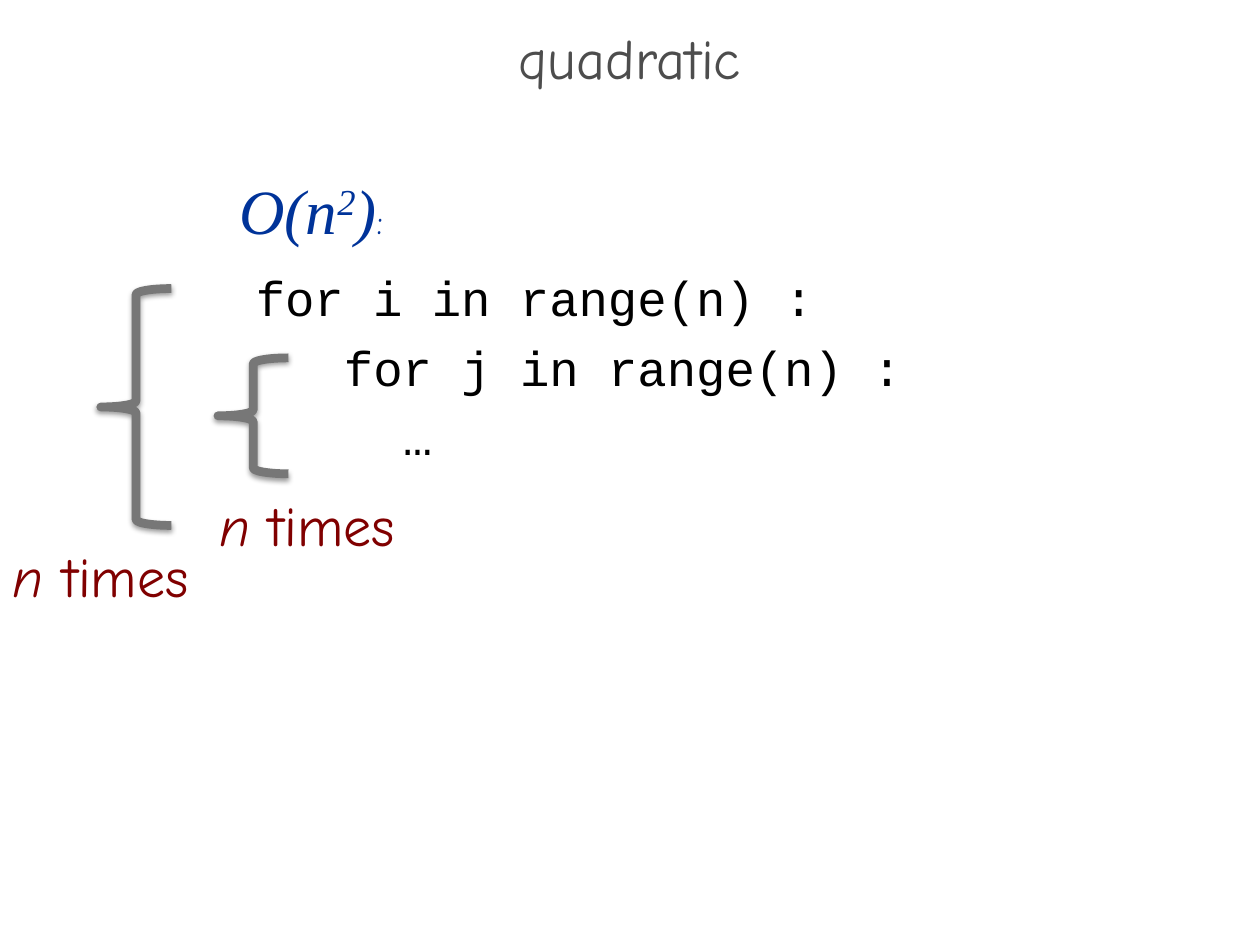
import dataclasses

import lxml.etree
import pptx
import pptx.dml.color
import pptx.enum.shapes
import pptx.enum.text
import pptx.oxml
import pptx.oxml.ns
import pptx.util


@dataclasses.dataclass(frozen=True)
class Theme:
    """Colours, fonts and type sizes of the slide."""

    hand: str = "Comic Neue"
    math: str = "Times New Roman"
    code: str = "Courier New"
    title: str = "4D4D4D"
    formula: str = "003399"
    ink: str = "000000"
    label: str = "800000"
    brace: str = "777777"
    paper: str = "FFFFFF"
    heading_size: int = 32
    formula_size: int = 36
    colon_size: int = 20
    code_size: int = 28
    brace_width: int = 5


@dataclasses.dataclass(frozen=True)
class Box:
    """A region in columns and rows of the slide grid."""

    column: float
    row: float
    columns: float
    rows: float

    def lengths(self):
        """Return left, top, width and height as lengths."""
        return [pptx.util.Inches(value * CELL) for value in dataclasses.astuple(self)]


CELL = 0.1
THEME = Theme()
SHADOW = (
    '<a:effectLst xmlns:a="http://schemas.openxmlformats.org/drawingml/2006/main">'
    '<a:outerShdw blurRad="39370" dist="20320" dir="5400000" rotWithShape="0">'
    '<a:srgbClr val="000000"><a:alpha val="38000"/></a:srgbClr>'
    "</a:outerShdw></a:effectLst>"
)


def rgb(code):
    """Return a colour from its hexadecimal code."""
    return pptx.dml.color.RGBColor.from_string(code)


def add_span(para, text, font, size, colour, italic=False):
    """Add one formatted run to a paragraph."""
    span = para.add_run()
    span.text = text
    span.font.name = font
    span.font.size = pptx.util.Pt(size)
    span.font.italic = italic
    span.font.color.rgb = rgb(colour)
    return span


def place(shape, box):
    """Move a shape into a box."""
    shape.left, shape.top, shape.width, shape.height = box.lengths()


def indent(para, margin):
    """Start a paragraph without a bullet at a margin in inches."""
    properties = para._p.get_or_add_pPr()
    properties.set("marL", str(int(pptx.util.Inches(margin))))
    properties.set("indent", "0")
    lxml.etree.SubElement(properties, pptx.oxml.ns.qn("a:buNone"))


def add_title(page, box):
    """Fill the title placeholder."""
    title = page.shapes.title
    place(title, box)
    frame = title.text_frame
    frame.auto_size = pptx.enum.text.MSO_AUTO_SIZE.NONE
    frame.vertical_anchor = pptx.enum.text.MSO_ANCHOR.MIDDLE
    para = frame.paragraphs[0]
    para.alignment = pptx.enum.text.PP_ALIGN.CENTER
    para.line_spacing = 0.7
    add_span(para, "quadratic", THEME.hand, THEME.heading_size, THEME.title)


def add_code(page, box):
    """Fill the body placeholder with the formula and the nested loops."""
    body = page.placeholders[1]
    place(body, box)
    frame = body.text_frame
    frame.auto_size = pptx.enum.text.MSO_AUTO_SIZE.NONE
    para = frame.paragraphs[0]
    para.space_before = pptx.util.Pt(4.6)
    para.space_after = pptx.util.Pt(12)
    indent(para, 0)
    for text, raised in (("O(n", False), ("2", True), (")", False)):
        span = add_span(para, text, THEME.math, THEME.formula_size, THEME.formula, True)
        if raised:
            span.font._element.set("baseline", "30000")
    add_span(para, ":", THEME.hand, THEME.colon_size, THEME.formula)

    character = 0.6 * THEME.code_size / 72
    lines = ((0, "for i in range(n) :"), (3, "for j in range(n) :"), (5, "…"))
    for depth, text in lines:
        para = frame.add_paragraph()
        para.level = 1
        para.space_before = pptx.util.Pt(0)
        para.space_after = pptx.util.Pt(6)
        indent(para, 0.13 + depth * character)
        add_span(para, text, THEME.code, THEME.code_size, THEME.ink)


def add_loop_marker(page, box, label_shift):
    """Draw a brace in a box and its repeat count below it."""
    label_box = Box(box.column + label_shift, box.row + box.rows + 0.8, 17.5, 6.4)
    label = page.shapes.add_textbox(*label_box.lengths())
    label.fill.solid()
    label.fill.fore_color.rgb = rgb(THEME.paper)
    label.text_frame.word_wrap = False
    para = label.text_frame.paragraphs[0]
    for text, italic in (("n", True), (" times", False)):
        add_span(para, text, THEME.hand, THEME.heading_size, THEME.label, italic)

    brace = page.shapes.add_shape(
        pptx.enum.shapes.MSO_SHAPE.LEFT_BRACE, *box.lengths()
    )
    brace.fill.background()
    brace.line.color.rgb = rgb(THEME.brace)
    brace.line.width = pptx.util.Pt(THEME.brace_width)
    brace._element.spPr.append(pptx.oxml.parse_xml(SHADOW))


def main():
    """Build and save the slide."""
    deck = pptx.Presentation()
    deck.slide_width = pptx.util.Inches(100 * CELL)
    deck.slide_height = pptx.util.Inches(75 * CELL)
    page = deck.slides.add_slide(deck.slide_layouts[1])
    add_title(page, Box(0, 2.7, 100, 5))
    add_code(page, Box(18, 13.1, 85.8, 59.2))
    add_loop_marker(page, Box(8, 22.9, 5.6, 18.8), -8)
    add_loop_marker(page, Box(17.3, 28.4, 5.6, 9.2), -0.9)
    deck.save("out.pptx")


if __name__ == "__main__":
    main()
